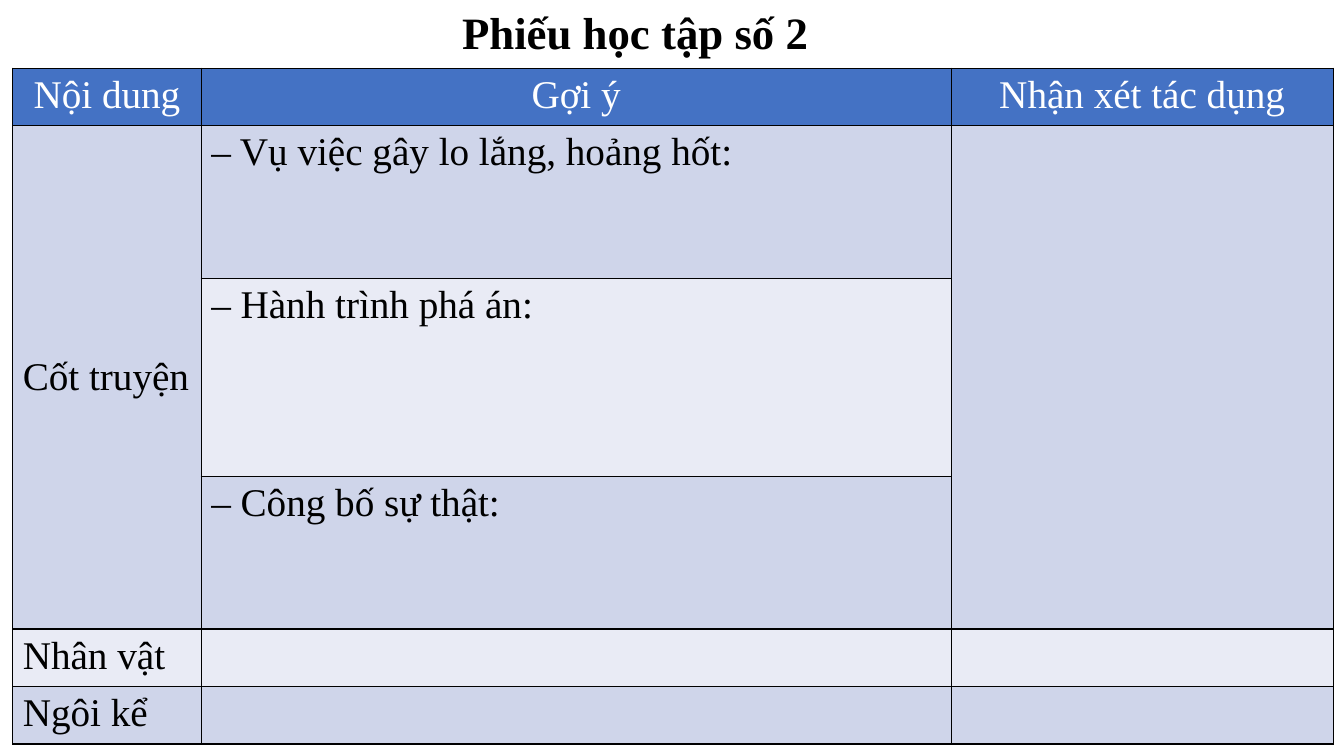
from lxml import etree
from pptx import Presentation
from pptx.dml.color import RGBColor
from pptx.enum.text import MSO_ANCHOR, MSO_AUTO_SIZE, PP_ALIGN
from pptx.oxml import parse_xml
from pptx.oxml.ns import nsdecls
from pptx.util import Cm, Pt

TOP, MIDDLE = MSO_ANCHOR.TOP, MSO_ANCHOR.MIDDLE
LEFT, CENTER = PP_ALIGN.LEFT, PP_ALIGN.CENTER
NO_AUTOFIT = MSO_AUTO_SIZE.NONE
FONT_NAME = "Times New Roman"
COLORS = {
    "header": "4472C4",
    "dark_band": "CFD5EA",
    "light_band": "E9EBF5",
    "white": "FFFFFF",
    "black": "000000",
}
COLUMN_WIDTHS = [4.75, 18.9, 9.63]
ROW_HEIGHTS = [1.45, 3.84, 5, 3.84, 1.45, 1.45]
ROWS = [
    ["Nội dung", "Gợi ý", "Nhận xét tác dụng"],
    ["Cốt truyện", "– Vụ việc gây lo lắng, hoảng hốt:", ""],
    ["", "– Hành trình phá án:", ""],
    ["", "– Công bố sự thật:", ""],
    ["Nhân vật", "", ""],
    ["Ngôi kể", "", ""],
]


def format_paragraph(paragraph, alignment, size, color, bold=False):
    paragraph.alignment = alignment
    font = paragraph.font
    if paragraph.runs:
        font = paragraph.runs[0].font
    for name, value in {"name": FONT_NAME, "size": Pt(size), "bold": bold}.items():
        setattr(font, name, value)
    font.color.rgb = RGBColor.from_string(COLORS[color])


def add_borders(cell):
    properties = cell._tc.get_or_add_tcPr()
    for side in ("lnL", "lnR", "lnT", "lnB"):
        border = parse_xml(f'<a:{side} {nsdecls("a")} w="{Pt(1)}"/>')
        fill = etree.SubElement(border, border.tag.replace(side, "solidFill"))
        etree.SubElement(fill, border.tag.replace(side, "srgbClr"), val=COLORS["black"])
        properties.append(border)


presentation = Presentation()
presentation.slide_width = Cm(33.87)
presentation.slide_height = Cm(19.05)
slide = presentation.slides.add_slide(presentation.slide_layouts[5])

title = slide.shapes.title
title_box = {"left": 11.35, "top": 0, "width": 9.32, "height": 1.63}
for name, value in title_box.items():
    setattr(title, name, Cm(value))
title.text = "Phiếu học tập số 2"
title_format = {"word_wrap": False, "auto_size": NO_AUTOFIT, "vertical_anchor": TOP}
for name, value in title_format.items():
    setattr(title.text_frame, name, value)
format_paragraph(title.text_frame.paragraphs[0], CENTER, 32, "black", bold=True)

table = slide.shapes.add_table(
    len(ROW_HEIGHTS), len(COLUMN_WIDTHS),
    Cm(0.32), Cm(1.72), Cm(sum(COLUMN_WIDTHS)), Cm(sum(ROW_HEIGHTS)),
).table
table.first_row = False
table.horz_banding = False
for column, width in zip(table.columns, COLUMN_WIDTHS):
    column.width = Cm(width)
for row, height in zip(table.rows, ROW_HEIGHTS):
    row.height = Cm(height)

for row_index, texts in enumerate(ROWS):
    is_header = row_index == 0
    band = "header" if is_header else "dark_band" if row_index % 2 else "light_band"
    for column_index, text in enumerate(texts):
        cell = table.cell(row_index, column_index)
        add_borders(cell)
        cell.fill.solid()
        cell.fill.fore_color.rgb = RGBColor.from_string(COLORS[band])
        if text:
            cell.text = text
            format_paragraph(
                cell.text_frame.paragraphs[0],
                CENTER if is_header else LEFT,
                28,
                "white" if is_header else "black",
            )

for column_index in (0, 2):
    table.cell(1, column_index).merge(table.cell(3, column_index))
table.cell(1, 0).vertical_anchor = MIDDLE

presentation.save("out.pptx")
